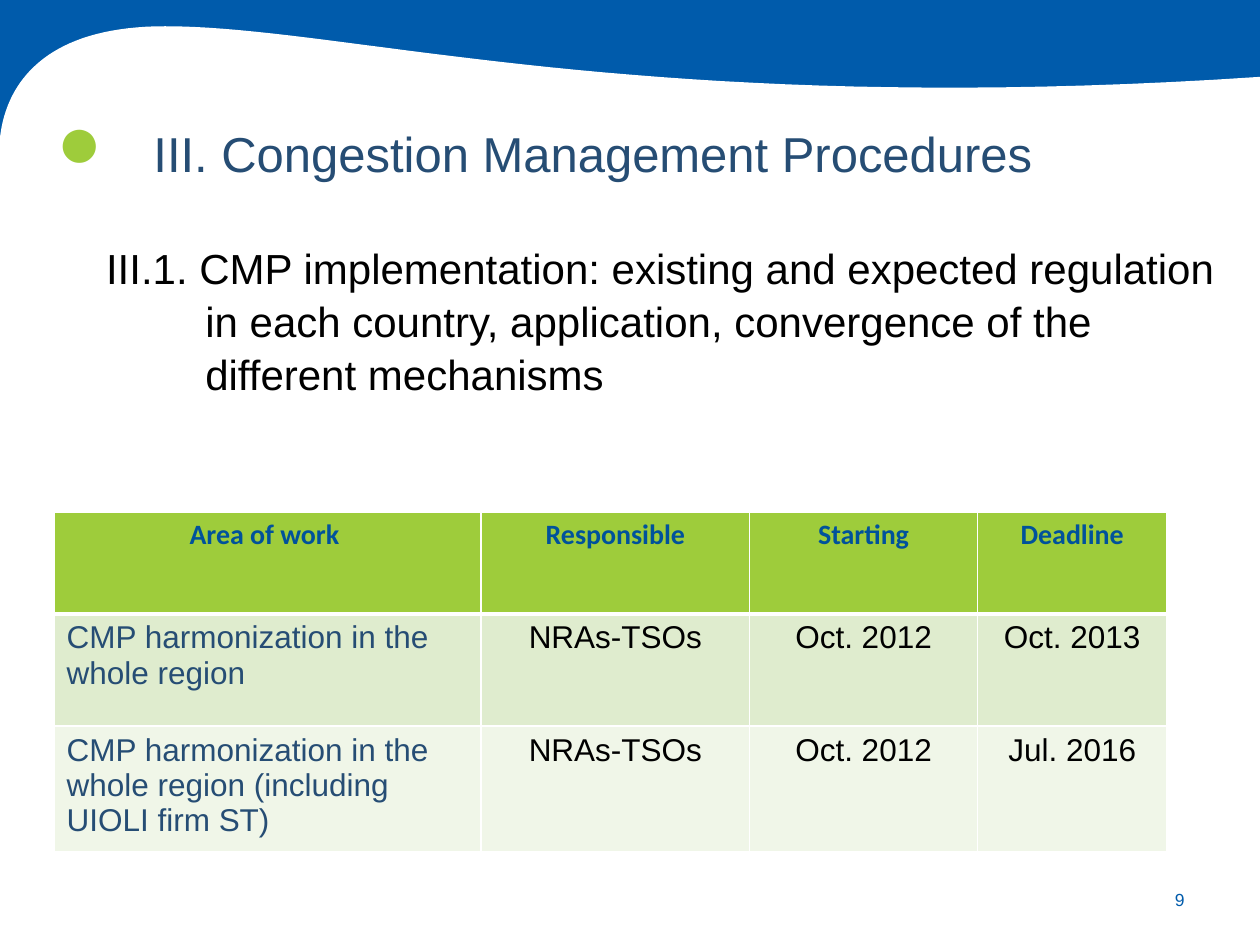
from lxml import etree
from pptx import Presentation
from pptx.dml.color import RGBColor
from pptx.enum.shapes import MSO_SHAPE
from pptx.enum.text import MSO_ANCHOR, PP_ALIGN
from pptx.oxml.ns import qn
from pptx.util import Cm, Pt

RECT = MSO_SHAPE.RECTANGLE
TOP, MIDDLE, BOTTOM = MSO_ANCHOR.TOP, MSO_ANCHOR.MIDDLE, MSO_ANCHOR.BOTTOM
LEFT, CENTER, RIGHT = PP_ALIGN.LEFT, PP_ALIGN.CENTER, PP_ALIGN.RIGHT

COLORS = {
    "blue": "005BAB", "header_text": "00529B", "navy": "264D74",
    "green": "9ECC3B", "band_dark": "DFECCE", "band_light": "F0F6E8",
    "white": "FFFFFF", "black": "000000",
}
SLIDE_W, SLIDE_H = 25.4, 19.05

COLUMNS = [8.61, 5.41, 4.6, 3.81]
ROW_HEIGHTS = [2.06, 2.26, 2.54]
HEADER = ["Area of work ", "Responsible", "Starting", "Deadline"]
BODY = [
    ["CMP harmonization in the whole region",
     "NRAs-TSOs", "Oct. 2012", "Oct. 2013"],
    ["CMP harmonization in the whole region (including UIOLI firm ST)",
     "NRAs-TSOs", "Oct. 2012", "Jul. 2016"],
]


def rgb(name):
    return RGBColor.from_string(COLORS[name])


def paint(sp, color):
    sp.shadow.inherit = False
    sp.fill.solid()
    sp.fill.fore_color.rgb = rgb(color)
    sp.line.fill.background()


def write(p, text, size, color, align=LEFT, font="Arial", bold=False):
    p.alignment = align
    r = p.add_run()
    r.text = text
    r.font.name, r.font.size, r.font.bold = font, Pt(size), bold
    r.font.color.rgb = rgb(color)


def add_text(s, box, text, size, color, align=LEFT, anchor=TOP,
             margin=0, indent=0, spacing=None):
    tf = s.shapes.add_textbox(*map(Cm, box)).text_frame
    tf.word_wrap = True
    tf.vertical_anchor = anchor
    p = tf.paragraphs[0]
    pPr = p._p.get_or_add_pPr()
    pPr.set("marL", str(Cm(margin)))
    pPr.set("indent", str(Cm(indent)))
    if spacing:
        p.line_spacing = spacing
    write(p, text, size, color, align)


def bezier(p0, p1, p2, p3, steps=40):
    """Points along a cubic curve, without its start."""
    for i in range(1, steps + 1):
        t = i / steps
        u = 1 - t
        yield tuple(u**3 * a + 3 * u * u * t * b + 3 * u * t * t * c + t**3 * d
                    for a, b, c, d in zip(p0, p1, p2, p3))


def add_banner(s, left, top, width, height):
    # Blue band
    paint(s.shapes.add_shape(RECT, Cm(left), Cm(top), Cm(width), Cm(height)),
          "blue")
    # White page with a curved upper edge
    start, crest, end = (0, 2.79), (3.33, 0.53), (width, 1.55)
    edge = [*bezier(start, (0.08, 2.01), (0.58, 0.53), crest),
            *bezier(crest, (7.01, 0.53), (12.95, 2.39), end),
            (width, SLIDE_H), (0, SLIDE_H)]
    points = [(Cm(left + x), Cm(top + y)) for x, y in [start, *edge]]
    builder = s.shapes.build_freeform(*points[0])
    builder.add_line_segments(points[1:], close=True)
    paint(builder.convert_to_shape(), "white")


def add_heading(s, left, top, width, height):
    add_text(s, (left + 0.18, top - 0.69, 1.4, 2.39), "●", 44, "green",
             CENTER, BOTTOM, 0.99, -0.99)
    add_text(s, (left, top, width, height),
             "III. Congestion Management Procedures", 28, "navy",
             CENTER, TOP, 0.99, -0.74, 1.2)


def add_subheading(s, left, top, width, height):
    add_text(s, (left, top, width, height),
             "III.1. CMP implementation: existing and expected regulation in "
             "each country, application, convergence of the different "
             "mechanisms", 24, "black", margin=3, indent=-2, spacing=1.05)


def set_borders(cell, **widths):
    tcPr = cell._tc.get_or_add_tcPr()
    for i, side in enumerate("LRTB"):
        ln = etree.Element(qn(f"a:ln{side}"), w=str(Pt(widths.get(side, 1))))
        fill = etree.SubElement(ln, qn("a:solidFill"))
        etree.SubElement(fill, qn("a:srgbClr"), val=COLORS["white"])
        tcPr.insert(i, ln)


def add_work_table(s, left, top):
    rows = [HEADER, *BODY]
    table = s.shapes.add_table(
        len(rows), len(COLUMNS), Cm(left), Cm(top),
        Cm(sum(COLUMNS)), Cm(sum(ROW_HEIGHTS))).table
    for column, width in zip(table.columns, COLUMNS):
        column.width = Cm(width)
    for row, height in zip(table.rows, ROW_HEIGHTS):
        row.height = Cm(height)

    fills = ["green", "band_dark", "band_light"]
    for i, texts in enumerate(rows):
        for j, text in enumerate(texts):
            cell = table.cell(i, j)
            cell.fill.solid()
            cell.fill.fore_color.rgb = rgb(fills[i])
            p = cell.text_frame.paragraphs[0]
            if i == 0:
                write(p, text, 16, "header_text", CENTER, "Calibri", True)
                set_borders(cell, B=3)
            else:
                write(p, text, 18, "black" if j else "navy",
                      CENTER if j else LEFT)
                set_borders(cell, T=3 if i == 1 else 1)


def add_page_number(s, left, top, width, height):
    add_text(s, (left, top, width, height), "9", 10, "blue", RIGHT, MIDDLE)


def main():
    prs = Presentation()
    prs.slide_width, prs.slide_height = Cm(SLIDE_W), Cm(SLIDE_H)
    s = prs.slides.add_slide(prs.slide_layouts[6])
    add_banner(s, 0, 0, SLIDE_W, 2.92)
    add_page_number(s, 22.71, 17.63, 1.42, 1.02)
    add_heading(s, 0.71, 2.13, 22.23, 1.55)
    add_subheading(s, 0.89, 4.72, 24.21, 3.33)
    add_work_table(s, 1.09, 10.32)
    prs.save("out.pptx")


if __name__ == "__main__":
    main()
